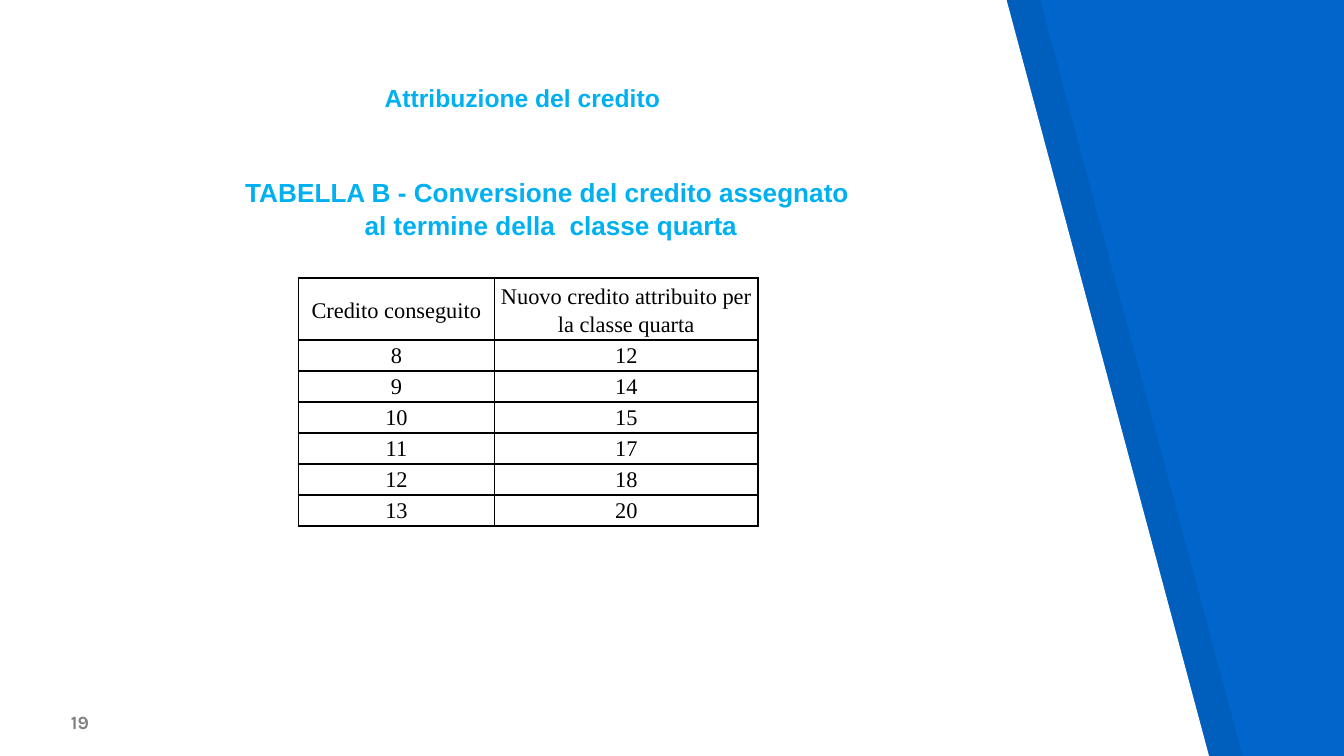
"""Build the slide with the table converting fourth-year credits."""
from lxml import etree
from pptx import Presentation
from pptx.dml.color import RGBColor
from pptx.enum import text
from pptx.oxml import ns
from pptx.util import Inches, Pt

BLUE = RGBColor(0x00, 0x66, 0xCC)
CYAN = RGBColor(0x00, 0xB0, 0xF0)
GRAY = RGBColor(0x80, 0x80, 0x80)
BLACK = RGBColor(0x00, 0x00, 0x00)
WHITE = RGBColor(0xFF, 0xFF, 0xFF)
CENTER = text.PP_ALIGN.CENTER


def add_panel(s, left, color):
    fb = s.shapes.build_freeform(Inches(left), Inches(-0.01))
    points = [(left, 5.64), (left + 9, 5.64), (left + 7.49, 0)]
    fb.add_line_segments([(Inches(x), Inches(y)) for x, y in points])
    sp = fb.convert_to_shape()
    sp.shadow.inherit = False
    sp.fill.solid()
    sp.fill.fore_color.rgb = color
    sp.line.fill.background()
    return sp


def format_runs(p, font, size, color, bold):
    for r in p.runs:
        r.font.name = font
        r.font.size = Pt(size)
        r.font.color.rgb = color
        r.font.bold = bold


prs = Presentation()
prs.slide_width = Inches(10)
prs.slide_height = Inches(5.625)
s = prs.slides.add_slide(prs.slide_layouts[6])
s.background.fill.solid()
s.background.fill.fore_color.rgb = BLUE

shade = add_panel(s, 0.25, BLACK)
clr = shade.fill._xPr.find(ns.qn("a:solidFill"))[0]
etree.SubElement(clr, ns.qn("a:alpha"), val="7000")
add_panel(s, 0, WHITE)

boxes = [
    ((0.43, 5.17, 0.37, 0.37), ["19"], "Karla", 10, GRAY, text.PP_ALIGN.LEFT, text.MSO_ANCHOR.BOTTOM),
    ((0.54, 0.52, 6.69, 0.68), ["Attribuzione del credito"], "Arial", 13.2, CYAN, CENTER, text.MSO_ANCHOR.TOP),
    ((0.72, 1.21, 6.76, 3.69),
     ["TABELLA B - Conversione del credito assegnato ", "al termine della  classe quarta"],
     "Arial", 14, CYAN, CENTER, text.MSO_ANCHOR.TOP),
]
for place, lines, font, size, color, align, anchor in boxes:
    tf = s.shapes.add_textbox(*[Inches(v) for v in place]).text_frame
    tf.word_wrap = True
    tf.vertical_anchor = anchor
    tf.margin_left = tf.margin_right = tf.margin_top = tf.margin_bottom = Inches(0.1)
    tf.text = "\n".join(lines)
    for i, p in enumerate(tf.paragraphs):
        p.alignment = align
        p.space_before = Pt(1 if i else 0)
        format_runs(p, font, size, color, True)

rows = [
    ("Credito conseguito", "Nuovo credito attribuito per la classe quarta"),
    ("8", "12"), ("9", "14"), ("10", "15"), ("11", "17"), ("12", "18"), ("13", "20"),
]
table = s.shapes.add_table(
    len(rows), 2, Inches(2.22), Inches(2.07), Inches(3.42), Inches(1.71)).table
for col, width in zip(table.columns, (1.46, 1.96)):
    col.width = Inches(width)
for i, values in enumerate(rows):
    table.rows[i].height = Inches(0.21 if i else 0.43)
    for j, value in enumerate(values):
        cell = table.cell(i, j)
        cell.margin_left = cell.margin_right = cell.margin_top = cell.margin_bottom = 0
        cell.vertical_anchor = text.MSO_ANCHOR.TOP if i else text.MSO_ANCHOR.MIDDLE
        cell.text = value
        p = cell.text_frame.paragraphs[0]
        p.alignment = CENTER
        p.line_spacing = 1.15
        format_runs(p, "Times New Roman", 12, BLACK, False)
        tcPr = cell._tc.get_or_add_tcPr()
        for side in ("lnL", "lnR", "lnT", "lnB"):
            ln = etree.SubElement(tcPr, ns.qn(f"a:{side}"), w=str(Pt(1)))
            fill = etree.SubElement(ln, ns.qn("a:solidFill"))
            etree.SubElement(fill, ns.qn("a:srgbClr"), val=str(BLACK))
        cell.fill.background()

prs.save("out.pptx")
